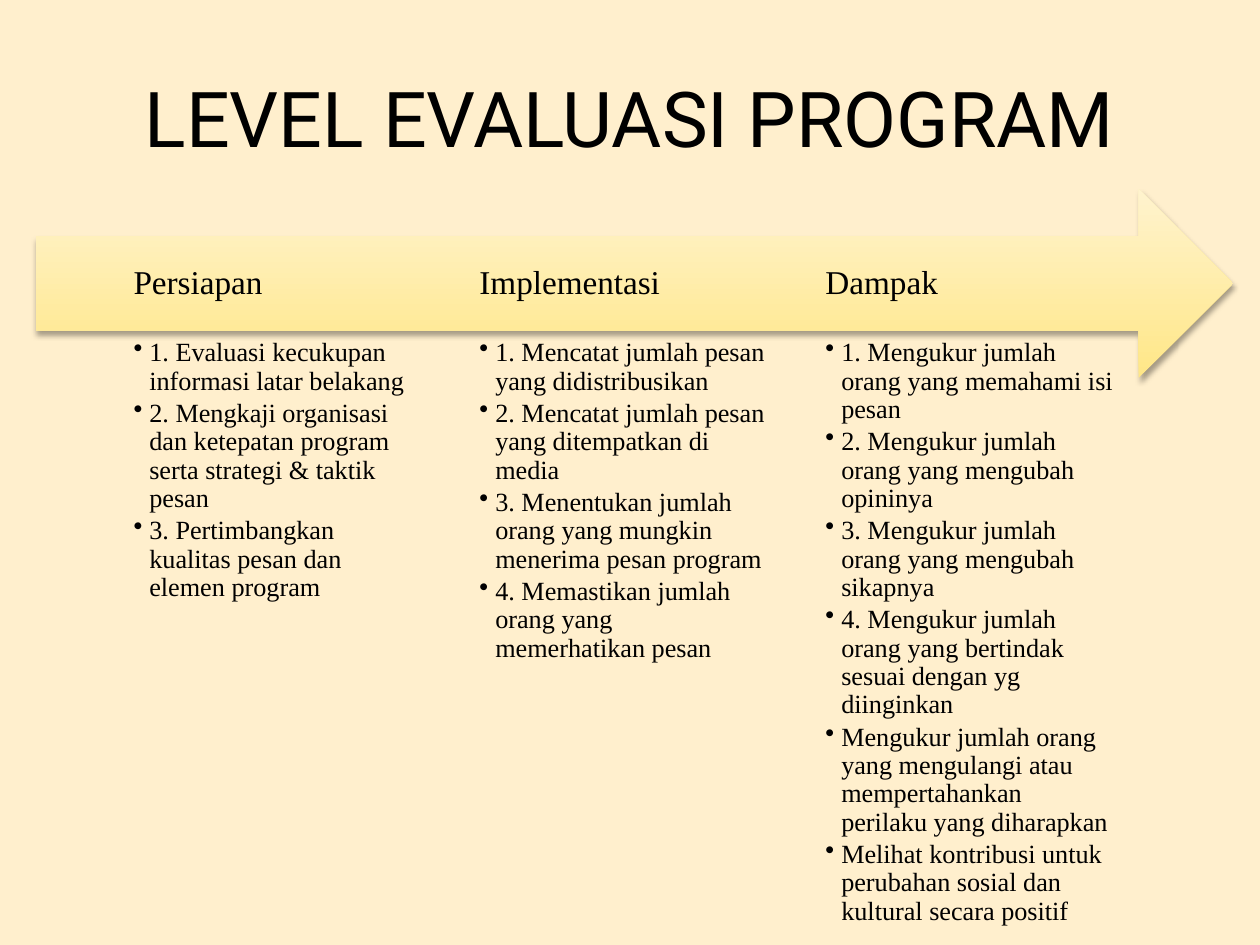
from dataclasses import dataclass

from pptx import Presentation
from pptx.dml.color import RGBColor
from pptx.enum.shapes import MSO_SHAPE
from pptx.enum.text import MSO_ANCHOR as Anchor, PP_ALIGN as Align
from pptx.oxml import parse_xml
from pptx.oxml.ns import nsdecls
from pptx.util import Pt

COLORS = {
    "background": "FFEFCD",
    "text": "000000",
    "arrow_bottom": "FFE787",
    "arrow_top": "FFF3CE",
    "shadow": "000000",
}
TITLE_FONT, BODY_FONT = "Roboto", "Times New Roman"

# Column grid, in points
COL_LEFT, COL_PITCH, COL_WIDTH = 76.3, 197.7, 165
HEAD_TOP, HEAD_HEIGHT = 135, 54
LIST_TOP, LIST_HEIGHT = 193.7, 334
BULLET_INDENT = 9


@dataclass
class Level:
    name: str
    points: list[str]


LEVELS = [
    Level("Persiapan", [
        "1. Evaluasi kecukupan informasi latar belakang",
        "2. Mengkaji organisasi dan ketepatan program serta strategi & taktik pesan",
        "3. Pertimbangkan kualitas pesan dan elemen program",
    ]),
    Level("Implementasi", [
        "1. Mencatat jumlah pesan yang didistribusikan",
        "2. Mencatat jumlah pesan yang ditempatkan di media",
        "3. Menentukan jumlah orang yang mungkin menerima pesan program",
        "4. Memastikan jumlah orang yang memerhatikan pesan",
    ]),
    Level("Dampak", [
        "1. Mengukur jumlah orang yang memahami isi pesan",
        "2. Mengukur jumlah orang yang mengubah opininya",
        "3. Mengukur jumlah orang yang mengubah sikapnya",
        "4. Mengukur jumlah orang yang bertindak sesuai dengan yg diinginkan",
        "Mengukur jumlah orang yang mengulangi atau mempertahankan perilaku yang diharapkan",
        "Melihat kontribusi untuk perubahan sosial dan kultural secara positif",
    ]),
]


def color(name: str) -> RGBColor:
    return RGBColor.from_string(COLORS[name])


def add_run(p, text: str, size: float, font: str) -> None:
    r = p.add_run()
    r.text = text
    r.font.size = Pt(size)
    r.font.name = font
    r.font.color.rgb = color("text")


def add_bullet(p) -> None:
    p.level = 1
    pPr = p._p.get_or_add_pPr()
    pPr.set("marL", str(Pt(BULLET_INDENT)))
    pPr.set("indent", str(-Pt(BULLET_INDENT)))
    pPr.append(parse_xml(f'<a:buChar {nsdecls("a")} char="•"/>'))


def add_text(s, left: float, top: float, height: float, lines: list[str],
             size: float, space_after: float, bullets: bool = False):
    tf = s.shapes.add_textbox(Pt(left), Pt(top), Pt(COL_WIDTH), Pt(height)).text_frame
    tf.word_wrap = True
    tf.margin_left = tf.margin_right = tf.margin_top = tf.margin_bottom = 0
    for i, line in enumerate(lines):
        p = tf.add_paragraph() if i else tf.paragraphs[0]
        p.line_spacing = 0.9
        p.space_after = Pt(space_after)
        if bullets:
            add_bullet(p)
        add_run(p, line, size, BODY_FONT)
    return tf


def add_level(s, level: Level, left: float) -> None:
    add_text(s, left, LIST_TOP, LIST_HEIGHT, level.points, 15, 2.25, bullets=True)
    tf = add_text(s, left, HEAD_TOP, HEAD_HEIGHT, [level.name], 19, 6.65)
    tf.vertical_anchor = Anchor.MIDDLE
    tf.margin_top = tf.margin_bottom = Pt(15)


def add_arrow(s) -> None:
    sp = s.shapes.add_shape(MSO_SHAPE.RIGHT_ARROW, Pt(20.6), Pt(108), Pt(684), Pt(108))
    sp.line.fill.background()
    sp.fill.gradient()
    sp.fill.gradient_angle = 90
    for stop, name in zip(sp.fill.gradient_stops, ("arrow_bottom", "arrow_top")):
        stop.color.rgb = color(name)
    # Soft shadow straight below
    sp.shadow.inherit = False
    sp._element.spPr.find("{*}effectLst").append(parse_xml(
        f'<a:outerShdw {nsdecls("a")} blurRad="{Pt(3.1)}" dist="{Pt(1.8)}" dir="5400000" '
        f'rotWithShape="0"><a:srgbClr val="{COLORS["shadow"]}"><a:alpha val="35000"/>'
        '</a:srgbClr></a:outerShdw>'))


def add_title(s, text: str) -> None:
    title = s.shapes.title
    title.left, title.top, title.width, title.height = Pt(36), Pt(21.6), Pt(648), Pt(90)
    tf = title.text_frame
    tf.vertical_anchor = Anchor.MIDDLE
    p = tf.paragraphs[0]
    p.alignment = Align.CENTER
    add_run(p, text, 44, TITLE_FONT)


def main() -> None:
    prs = Presentation()
    prs.slide_width, prs.slide_height = Pt(720), Pt(540)
    s = prs.slides.add_slide(prs.slide_layouts[5])
    s.background.fill.solid()
    s.background.fill.fore_color.rgb = color("background")

    add_title(s, "LEVEL EVALUASI PROGRAM")
    add_arrow(s)
    for i, level in enumerate(LEVELS):
        add_level(s, level, COL_LEFT + i * COL_PITCH)

    prs.save("out.pptx")


if __name__ == "__main__":
    main()
